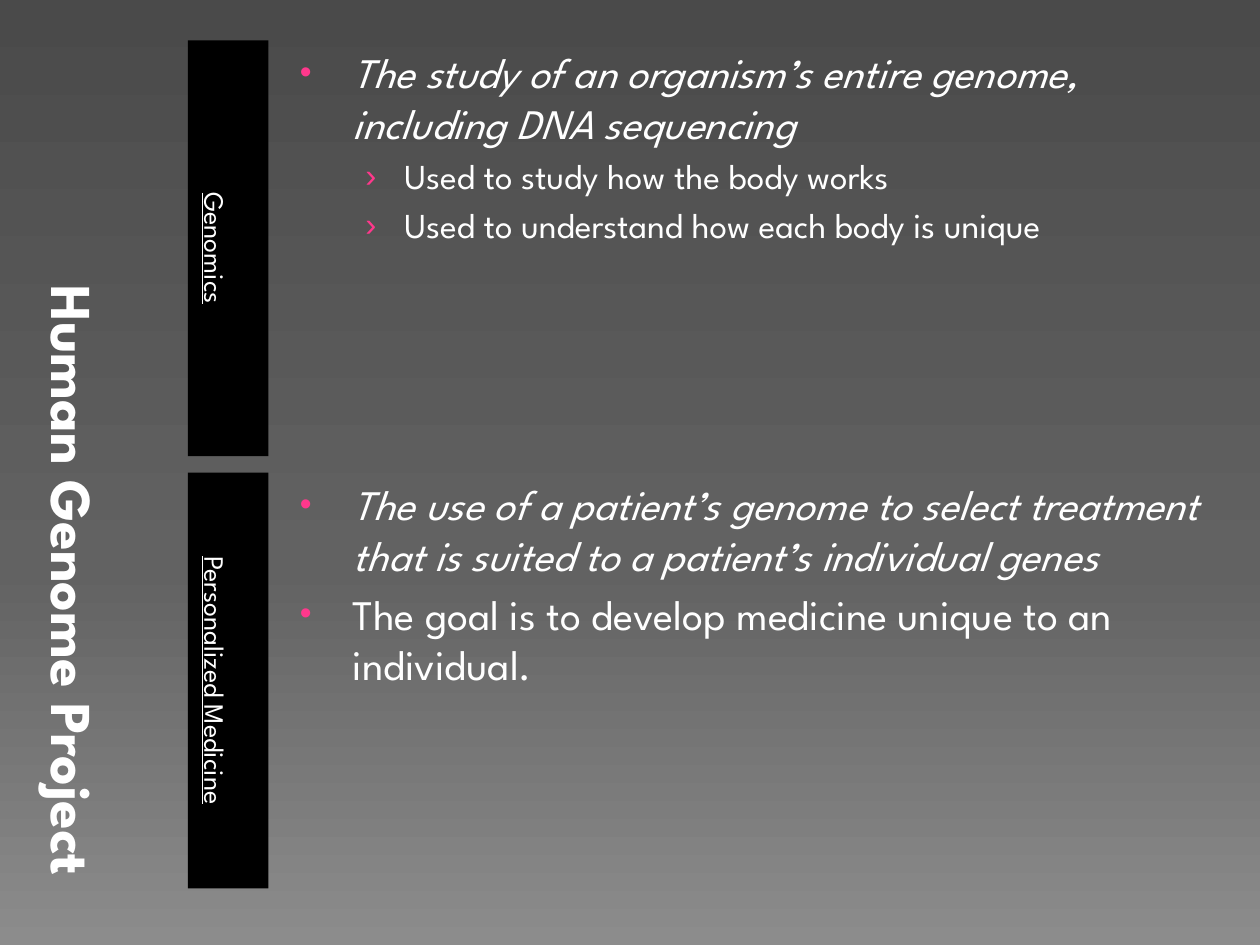
from copy import deepcopy

from pptx import Presentation
from pptx.dml.color import RGBColor
from pptx.enum.text import MSO_ANCHOR, MSO_AUTO_SIZE, PP_ALIGN
from pptx.oxml import parse_xml
from pptx.oxml.ns import nsdecls, qn
from pptx.util import Inches, Pt

FONT = "League Spartan"
COLORS = {"text": "FFFFFF", "label": "000000", "bullet": "FF388C"}
BACKGROUND = [(0, "4A4A4A"), (0.6, "626262"), (1, "8C8C8C")]
# Per level: font size, left margin, first-line indent, bullet, bullet size
LEVELS = [(24, 0.49, -0.42, "•", 80), (20, 0.9, -0.31, "›", 95)]

TOP, ROW_HEIGHT, ROW_GAP = 0.32, 3.3, 0.13
# Each row: label, then (text, level, italic) for each list item
ROWS = [
    ("Genomics", [
        ("The study of an organism’s entire genome, including DNA sequencing", 0, True),
        ("Used to study how the body works", 1, False),
        ("Used to understand how each body is unique", 1, False),
    ]),
    ("Personalized Medicine", [
        ("The use of a patient’s genome to select treatment that is suited to "
         "a patient’s individual genes", 0, True),
        ("The goal is to develop medicine unique to an individual.", 0, False),
    ]),
]


def rgb(name):
    return RGBColor.from_string(COLORS[name])


def place(sp, box, anchor):
    """Move a placeholder to box (inches) and return its prepared text frame."""
    sp.left, sp.top, sp.width, sp.height = (Inches(v) for v in box)
    tf = sp.text_frame
    tf.word_wrap = True
    tf.auto_size = MSO_AUTO_SIZE.NONE
    tf.vertical_anchor = anchor
    return tf


def place_sideways(sp, box, anchor):
    """Turn a placeholder a quarter clockwise so that it covers box."""
    x, y, w, h = box
    tf = place(sp, (x + (w - h) / 2, y + (h - w) / 2, h, w), anchor)
    sp.rotation = 90
    return tf


def style(p, size, bold=False, italic=False, underline=False):
    f = p.font
    f.name, f.size = FONT, Pt(size)
    f.bold, f.italic, f.underline = bold, italic, underline
    f.color.rgb = rgb("text")


def add_bullet(p, left, indent, char, percent):
    pPr = p._p.get_or_add_pPr()
    pPr.set("marL", str(Inches(left)))
    pPr.set("indent", str(Inches(indent)))
    marks = (
        f'<a:buClr {nsdecls("a")}><a:srgbClr val="{COLORS["bullet"]}"/></a:buClr>',
        f'<a:buSzPct {nsdecls("a")} val="{percent * 1000}"/>',
        f'<a:buFont {nsdecls("a")} typeface="Arial"/>',
        f'<a:buChar {nsdecls("a")} char="{char}"/>',
    )
    for mark in marks:
        pPr.insert_element_before(parse_xml(mark), "a:defRPr")


def fill_background(slide):
    fill = slide.background.fill
    fill.gradient()
    fill.gradient_angle = 270
    gs_list = slide.background._cSld.find(".//" + qn("a:gsLst"))
    gs_list.append(deepcopy(gs_list[-1]))
    for stop, (position, color) in zip(fill.gradient_stops, BACKGROUND):
        stop.position = position
        stop.color.rgb = RGBColor.from_string(color)


def fill_title(sp, box):
    p = place_sideways(sp, box, MSO_ANCHOR.BOTTOM).paragraphs[0]
    p.text = "Human Genome Project"
    p.alignment = PP_ALIGN.RIGHT
    style(p, 33, bold=True)


def fill_label(sp, box, text):
    sp.fill.solid()
    sp.fill.fore_color.rgb = rgb("label")
    tf = place_sideways(sp, box, MSO_ANCHOR.MIDDLE)
    tf.margin_top = Inches(0.25)
    p = tf.paragraphs[0]
    p.text = text
    p.alignment = PP_ALIGN.CENTER
    p.space_before = Pt(16 * 0.2)
    style(p, 16, underline=True)


def fill_list(sp, box, items):
    tf = place(sp, box, MSO_ANCHOR.TOP)
    for i, (text, level, italic) in enumerate(items):
        p = tf.add_paragraph() if i else tf.paragraphs[0]
        size, *bullet = LEVELS[level]
        p.text, p.level = text, level
        p.space_before = Pt(size * 0.2)
        style(p, size, italic=italic)
        add_bullet(p, *bullet)


def main():
    prs = Presentation()
    prs.slide_width, prs.slide_height = Inches(10), Inches(7.5)
    slide = prs.slides.add_slide(prs.slide_layouts.get_by_name("Comparison"))
    fill_background(slide)

    title, *bodies = slide.placeholders
    fill_title(title, (0.27, TOP, 1.17, 2 * ROW_HEIGHT + ROW_GAP))
    for i, (label, items) in enumerate(ROWS):
        y = TOP + i * (ROW_HEIGHT + ROW_GAP)
        fill_label(bodies[2 * i], (1.49, y, 0.64, ROW_HEIGHT), label)
        fill_list(bodies[2 * i + 1], (2.21, y, 7.5, ROW_HEIGHT), items)
    prs.save("out.pptx")


if __name__ == "__main__":
    main()
